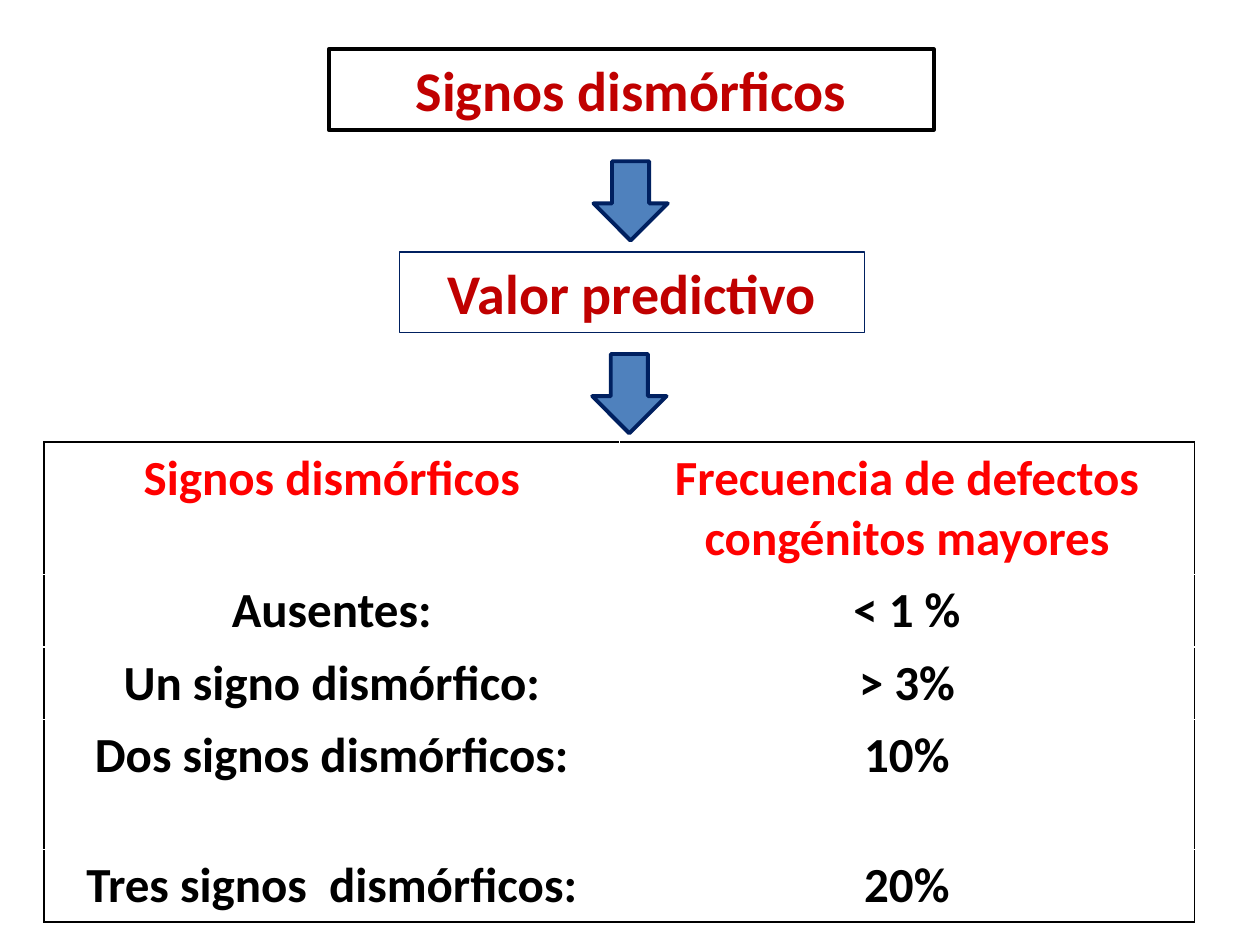
import pptx
import pptx.util
import pptx.dml.color
import pptx.enum.shapes
import pptx.enum.text
import pptx.oxml
import pptx.oxml.ns

COLORS = {"black": "000000", "navy": "002060", "blue": "4F81BD",
          "dark_red": "C00000", "red": "FF0000"}
FONT = "Calibri"
SHAPES = pptx.enum.shapes.MSO_SHAPE
UNIT = pptx.util.Inches(0.1)

SIGNS = [("Signos dismórficos", "Frecuencia de defectos congénitos mayores"),
         ("Ausentes:", "< 1 %"),
         ("Un signo dismórfico:", "> 3%"),
         ("Dos signos dismórficos:", "10%"),
         ("Tres signos  dismórficos:", "20%")]
ROW_SHARES = [1.03, 0.57, 0.57, 1.03, 0.57]


def rgb(name):
    return pptx.dml.color.RGBColor.from_string(COLORS[name])


def grid(box):
    return [int(length * UNIT) for length in box]


def write(frame, text, size, color):
    paragraph = frame.paragraphs[0]
    paragraph.alignment = pptx.enum.text.PP_ALIGN.CENTER
    run = paragraph.add_run()
    run.text = text
    run.font.name = FONT
    run.font.size = pptx.util.Pt(size)
    run.font.bold = True
    run.font.color.rgb = rgb(color)


def outlined(slide, preset, box, line, width):
    outline = slide.shapes.add_shape(preset, *grid(box))
    outline.shadow.inherit = False
    outline.line.color.rgb = rgb(line)
    outline.line.width = pptx.util.Pt(width)
    return outline


def add_heading(slide, box, text, line, width):
    heading = outlined(slide, SHAPES.RECTANGLE, box, line, width)
    heading.fill.background()
    heading.text_frame.word_wrap = True
    write(heading.text_frame, text, 32, "dark_red")


def add_down_arrow(slide, box):
    arrow = outlined(slide, SHAPES.DOWN_ARROW, box, "navy", 2.25)
    arrow.fill.solid()
    arrow.fill.fore_color.rgb = rgb("blue")


def add_border(cell, side):
    cell._tc.get_or_add_tcPr().append(pptx.oxml.parse_xml(
        f'<a:ln{side} {pptx.oxml.ns.nsdecls("a")} w="12700"><a:solidFill>'
        f'<a:srgbClr val="{COLORS["black"]}"/></a:solidFill></a:ln{side}>'))


def add_frequency_table(slide, box):
    left, top, width, height = grid(box)
    rows, columns = len(SIGNS), len(SIGNS[0])
    table = slide.shapes.add_table(rows, columns, left, top, width, height).table
    table.first_row = False
    table.horz_banding = False
    for column in table.columns:
        column.width = width // columns
    for r, texts in enumerate(SIGNS):
        table.rows[r].height = int(height * ROW_SHARES[r] / sum(ROW_SHARES))
        for c, text in enumerate(texts):
            cell = table.cell(r, c)
            outer = {"L": c == 0, "R": c == columns - 1,
                     "T": r == 0, "B": r == rows - 1}
            for side, on_edge in outer.items():
                if on_edge:
                    add_border(cell, side)
            cell.fill.background()
            write(cell.text_frame, text, 28, "red" if r == 0 else "black")


def main():
    deck = pptx.Presentation()
    deck.slide_width = 100 * UNIT
    deck.slide_height = 75 * UNIT
    slide = deck.slides.add_slide(deck.slide_layouts[6])
    add_heading(slide, (26.1, 3.9, 48, 6.4), "Signos dismórficos", "black", 2.25)
    add_down_arrow(slide, (47.1, 12.8, 5.9, 6.3))
    add_heading(slide, (31.7, 20, 36.9, 6.4), "Valor predictivo", "navy", 0.75)
    add_frequency_table(slide, (3.5, 35.1, 91.3, 37.7))
    add_down_arrow(slide, (47, 28.1, 5.9, 6.3))
    deck.save("out.pptx")


if __name__ == "__main__":
    main()
